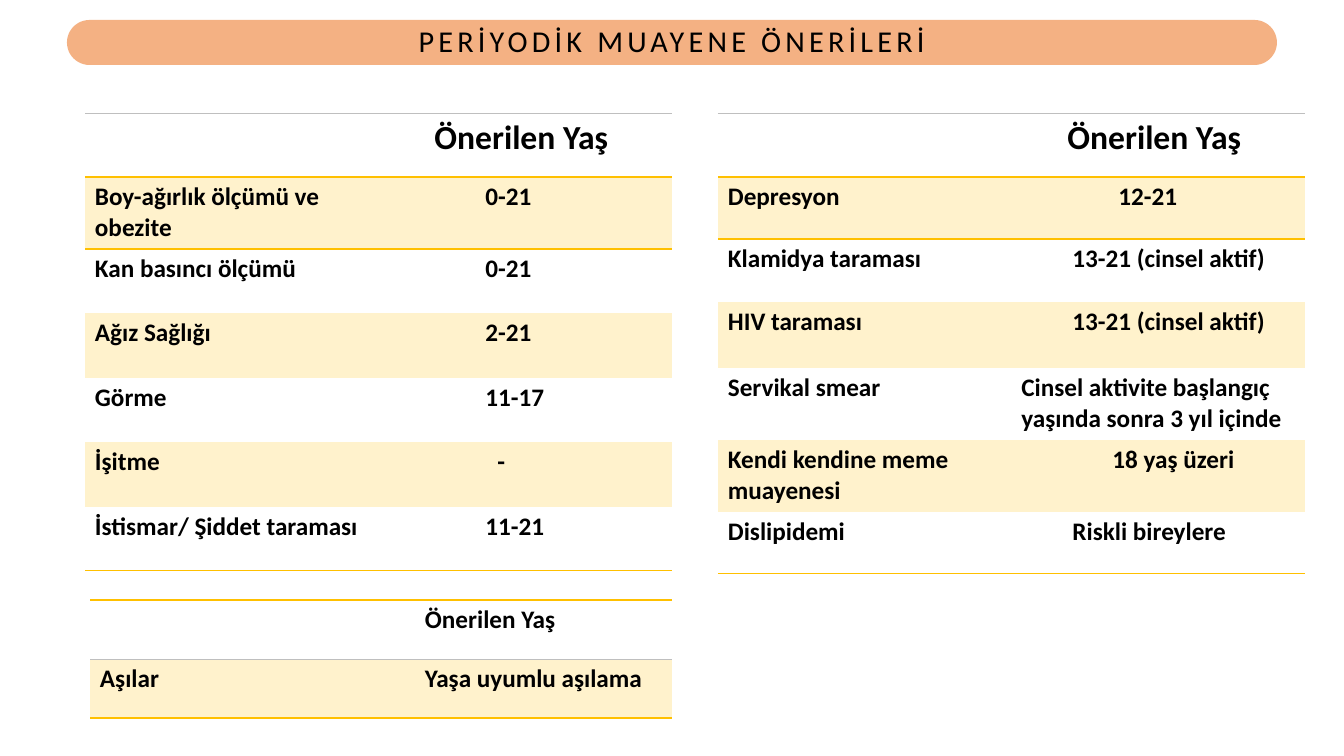
import pptx
import pptx.util
import pptx.dml.color
import pptx.enum.shapes
import pptx.enum.text
import pptx.oxml
import pptx.oxml.ns

RGBColor = pptx.dml.color.RGBColor
BLACK = RGBColor(0x00, 0x00, 0x00)
PEACH = RGBColor(0xF4, 0xB1, 0x83)
GOLD = RGBColor(0xFF, 0xC0, 0x00)
CREAM = RGBColor(0xFF, 0xF2, 0xCC)
GRAY = RGBColor(0xBF, 0xBF, 0xBF)

FONT = "Calibri"
EMU_PER_PX = 914400 / 100.8
NO_STYLE = "{2D5ABB26-0587-4C30-8999-92F81FD0307C}"
CELL_MARGIN = 10
AGE_INDENT = 107
HEADING = "Önerilen Yaş"

# Each row: label, recommended age, left indent of the age
CHILD_ROWS = [
    ("", HEADING, 56),
    ("Boy-ağırlık ölçümü ve obezite", "0-21", AGE_INDENT),
    ("Kan basıncı ölçümü", "0-21", AGE_INDENT),
    ("Ağız Sağlığı", "2-21", AGE_INDENT),
    ("Görme", "11-17", AGE_INDENT),
    ("İşitme", "-", 119),
    ("İstismar/ Şiddet taraması", "11-21", AGE_INDENT),
]
TEEN_ROWS = [
    ("", HEADING, 56),
    ("Depresyon", "12-21", AGE_INDENT),
    ("Klamidya taraması", "13-21 (cinsel aktif)", 61),
    ("HIV taraması", "13-21 (cinsel aktif)", 61),
    ("Servikal smear", "Cinsel aktivite başlangıç yaşında sonra 3 yıl içinde", CELL_MARGIN),
    ("Kendi kendine meme muayenesi", "18 yaş üzeri", 101),
    ("Dislipidemi", "Riskli bireylere", 61),
]
VACCINE_ROWS = [
    ("", HEADING, 44),
    ("Aşılar", "Yaşa uyumlu aşılama", 44),
]


def px(length):
    return pptx.util.Emu(round(length * EMU_PER_PX))


def add_run(paragraph, text, size, bold):
    run = paragraph.add_run()
    run.text = text
    run.font.name = FONT
    run.font.size = pptx.util.Pt(size)
    run.font.bold = bold
    run.font.color.rgb = BLACK
    return run


def add_title(slide, left, top, width, height):
    banner = slide.shapes.add_shape(
        pptx.enum.shapes.MSO_SHAPE.ROUNDED_RECTANGLE,
        px(left), px(top), px(width), px(height))
    banner.adjustments[0] = 0.5
    banner.shadow.inherit = False
    banner.fill.solid()
    banner.fill.fore_color.rgb = PEACH
    banner.line.fill.background()
    frame = banner.text_frame
    frame.vertical_anchor = pptx.enum.text.MSO_ANCHOR.MIDDLE
    frame.margin_top = frame.margin_bottom = 0
    paragraph = frame.paragraphs[0]
    paragraph.alignment = pptx.enum.text.PP_ALIGN.CENTER
    paragraph.line_spacing = 0.9
    run = add_run(paragraph, "PERİYODİK MUAYENE ÖNERİLERİ", 21.6, False)
    run.font._element.set("spc", "300")


def set_border(cell, side, color, width):
    """Rule one side of a cell: lnT or lnB."""
    border = pptx.oxml.parse_xml(
        f'<a:{side} {pptx.oxml.ns.nsdecls("a")} w="{pptx.util.Pt(width)}">'
        f'<a:solidFill><a:srgbClr val="{color}"/></a:solidFill></a:{side}>')
    cell._tc.get_or_add_tcPr().insert(0, border)


def fill_cell(cell, text, size, indent, shaded):
    cell.margin_left = px(indent)
    cell.margin_right = px(CELL_MARGIN if indent == CELL_MARGIN else 0)
    cell.margin_top = cell.margin_bottom = px(5)
    if shaded:
        cell.fill.solid()
        cell.fill.fore_color.rgb = CREAM
    else:
        cell.fill.background()
    if text:
        add_run(cell.text_frame.paragraphs[0], text, size, True)


def add_age_table(slide, left, top, width, heights, rows, heading_size, rules):
    """Place a two-column table; rules maps a row edge to (color, width)."""
    frame = slide.shapes.add_table(
        len(rows), 2, px(left), px(top), px(width), px(sum(heights)))
    table = frame.table
    table._tbl.tblPr.find(pptx.oxml.ns.qn("a:tableStyleId")).text = NO_STYLE
    for column in table.columns:
        column.width = px(width / 2)
    for index, (label, age, indent) in enumerate(rows):
        table.rows[index].height = px(heights[index])
        size = 18 if index else heading_size
        shaded = index % 2 == 1
        fill_cell(table.cell(index, 0), label, size, CELL_MARGIN, shaded)
        fill_cell(table.cell(index, 1), age, size, indent, shaded)
        for cell in table.rows[index].cells:
            for side, edge in (("lnB", index + 1), ("lnT", index)):
                if edge in rules:
                    set_border(cell, side, *rules[edge])


def build_slide(presentation):
    slide = presentation.slides.add_slide(presentation.slide_layouts[6])
    add_title(slide, 67, 20, 1210, 45)
    tall_rules = {0: (GRAY, 0.75), 1: (GOLD, 1), 7: (GOLD, 1)}
    add_age_table(slide, 85, 113, 587, [64, 72, 64, 65, 64, 65, 64],
                  CHILD_ROWS, 24, tall_rules)
    add_age_table(slide, 718, 113, 587, [64, 62, 63, 66, 72, 72, 62],
                  TEEN_ROWS, 24, tall_rules)
    add_age_table(slide, 90, 600, 582, [59, 59], VACCINE_ROWS, 18,
                  {0: (GOLD, 1.5), 1: (GRAY, 0.75), 2: (GOLD, 1.5)})


def main():
    presentation = pptx.Presentation()
    presentation.slide_width = px(1344)
    presentation.slide_height = px(756)
    build_slide(presentation)
    presentation.save("out.pptx")


if __name__ == "__main__":
    main()
